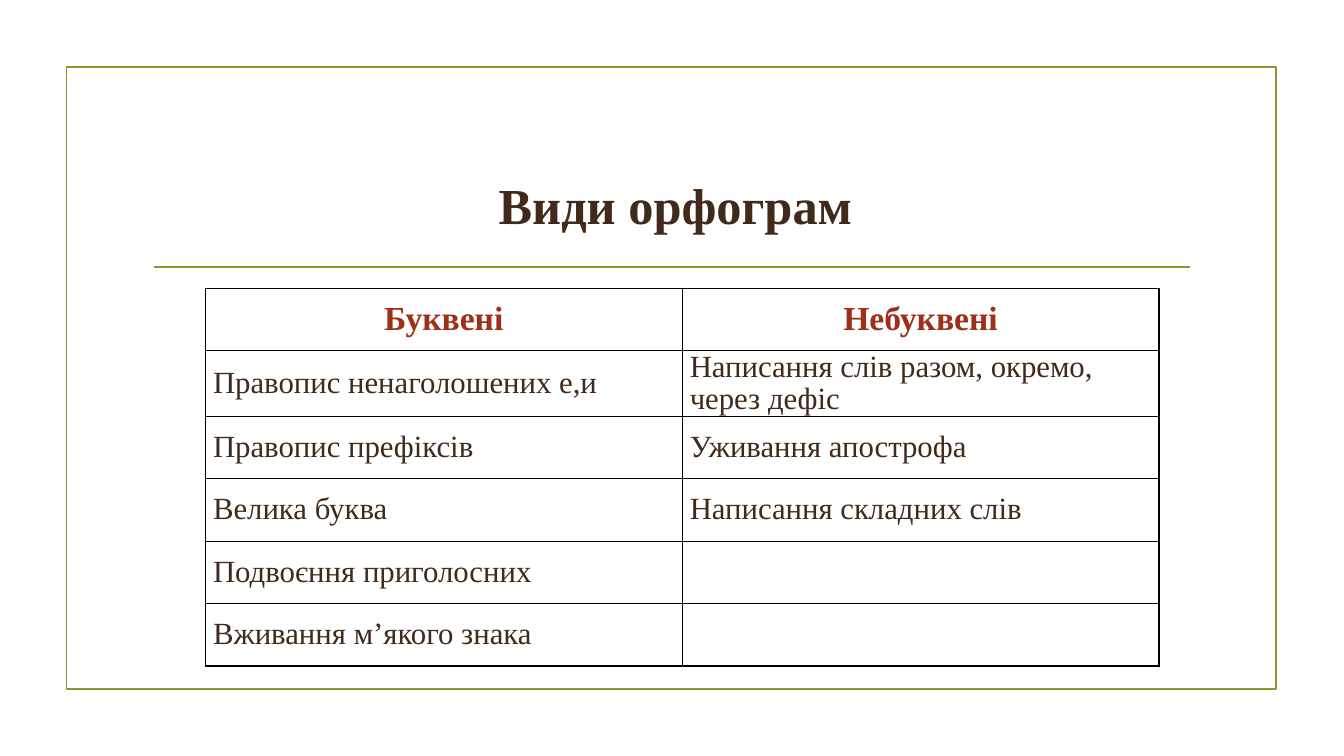
from pptx import Presentation
from pptx.dml.color import RGBColor
from pptx.enum.shapes import MSO_CONNECTOR, MSO_SHAPE
from pptx.enum.text import MSO_ANCHOR, PP_ALIGN
from pptx.oxml.ns import qn
from pptx.util import Pt
from lxml.etree import SubElement

GREEN = RGBColor(0x83, 0x99, 0x2A)
RED = RGBColor(0xA0, 0x2F, 0x18)
BROWN = RGBColor(0x41, 0x29, 0x1B)
FONT = "Times New Roman"
ROWS = [
    ("Буквені", "Небуквені"),
    ("Правопис ненаголошених е,и", "Написання слів разом, окремо, через дефіс"),
    ("Правопис префіксів", "Уживання апострофа"),
    ("Велика буква", "Написання складних слів"),
    ("Подвоєння приголосних", ""),
    ("Вживання м’якого знака", ""),
]


def style_text(p, size, color, bold):
    for r in p.runs:
        r.font.name = FONT
        r.font.size = Pt(size)
        r.font.bold = bold
        r.font.color.rgb = color


def add_frame(s, left, top, width, height):
    sp = s.shapes.add_shape(MSO_SHAPE.RECTANGLE, Pt(left), Pt(top), Pt(width), Pt(height))
    sp.shadow.inherit = False
    sp.fill.background()
    sp.line.color.rgb = GREEN
    sp.line.width = Pt(1.25)


def add_rule(s, left, top, width):
    line = s.shapes.add_connector(
        MSO_CONNECTOR.STRAIGHT, Pt(left), Pt(top), Pt(left + width), Pt(top))
    line.line.color.rgb = GREEN
    line.line.width = Pt(1.25)
    SubElement(line._element.spPr, qn("a:effectLst"))


def add_title(s, left, top, width, height):
    sp = s.shapes.title
    sp.left, sp.top, sp.width, sp.height = Pt(left), Pt(top), Pt(width), Pt(height)
    tf = sp.text_frame
    tf.text = "Види орфограм"
    tf.word_wrap = True
    tf.vertical_anchor = MSO_ANCHOR.TOP
    tf.margin_top = Pt(8.5)
    p = tf.paragraphs[0]
    p.alignment = PP_ALIGN.LEFT
    style_text(p, 36, BROWN, True)


def add_borders(cell):
    tcPr = cell._tc.get_or_add_tcPr()
    for i, side in enumerate(("lnL", "lnR", "lnT", "lnB")):
        ln = tcPr.makeelement(qn(f"a:{side}"), {"w": str(Pt(1))})
        fill = SubElement(ln, qn("a:solidFill"))
        SubElement(fill, qn("a:srgbClr"), val="000000")
        tcPr.insert(i, ln)


def add_spelling_table(s, left, top, width, height):
    frame = s.shapes.add_table(
        len(ROWS), 2, Pt(left), Pt(top), Pt(width), Pt(height))
    table = frame.table
    table.first_row = False
    table.horz_banding = False
    for i, texts in enumerate(ROWS):
        table.rows[i].height = Pt(height / len(ROWS))
        for j, text in enumerate(texts):
            cell = table.cell(i, j)
            cell.text = text
            cell.fill.background()
            cell.vertical_anchor = MSO_ANCHOR.MIDDLE
            cell.margin_left = cell.margin_right = Pt(5.4)
            cell.margin_top = cell.margin_bottom = 0
            add_borders(cell)
            p = cell.text_frame.paragraphs[0]
            p.line_spacing = 0.96
            if i == 0:
                p.alignment = PP_ALIGN.CENTER
                style_text(p, 24, RED, True)
            else:
                style_text(p, 22, BROWN, False)


def main():
    prs = Presentation()
    prs.slide_width, prs.slide_height = Pt(960), Pt(540)
    s = prs.slides.add_slide(prs.slide_layouts[5])
    add_frame(s, 47.5, 48, 864, 444)
    add_rule(s, 110, 190.8, 740)
    add_spelling_table(s, 146.8, 206, 681, 267.6)
    add_title(s, 349, 116, 277, 74)
    prs.save("out.pptx")


if __name__ == "__main__":
    main()
